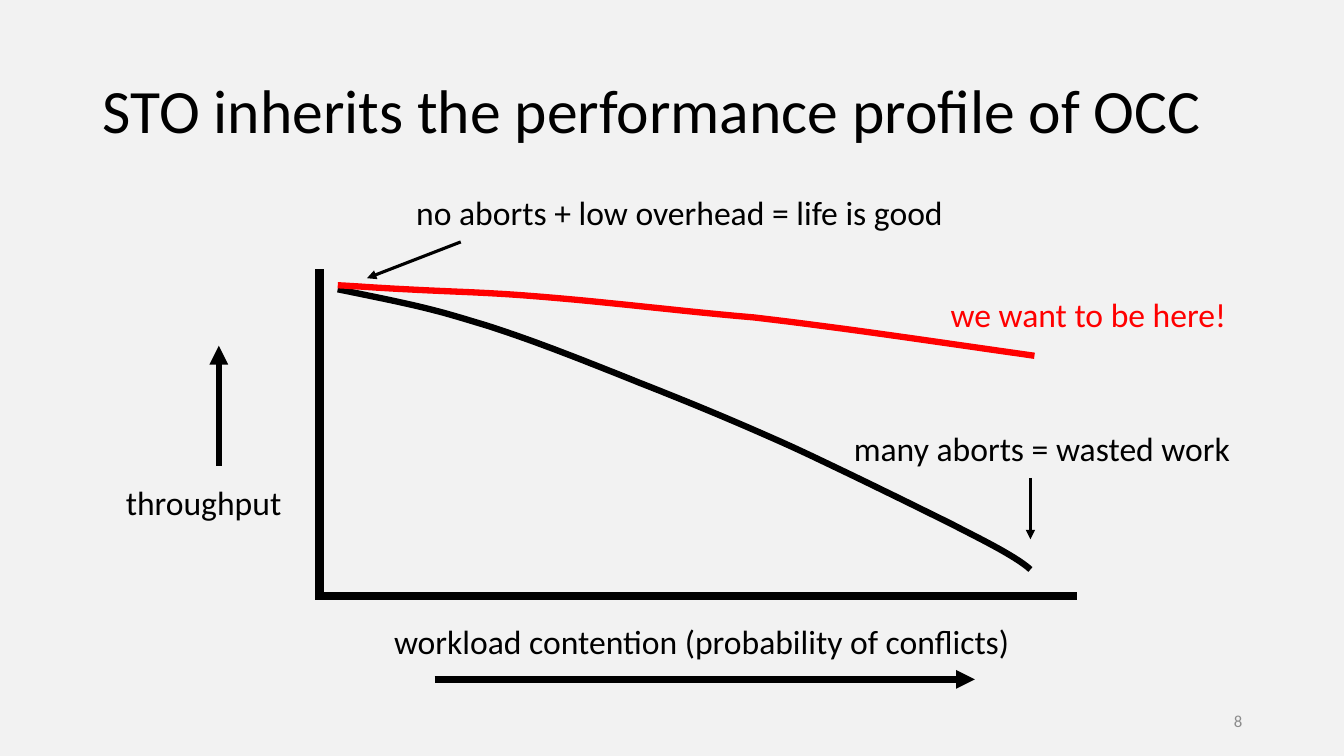
from lxml.etree import SubElement
from pptx import Presentation
from pptx.dml.color import RGBColor
from pptx.enum.shapes import MSO_CONNECTOR
from pptx.enum.text import MSO_ANCHOR, MSO_AUTO_SIZE, PP_ALIGN
from pptx.oxml.ns import qn
from pptx.util import Inches, Pt

COLORS = {"paper": "F2F2F2", "ink": "000000", "goal": "FF0000", "number": "8C8C8C"}
FONT = "Calibri"
TITLE = "STO inherits the performance profile of OCC"
TITLE_BOX = (0.92, 0.4, 11.5, 1.45)
NUMBER = "8"
NUMBER_BOX = (9.42, 6.95, 3, 0.4)
LABEL_HEIGHT = 0.5

LABELS = [
    ("workload contention (probability of conflicts)", 3.81, 6.11, 6.36, "ink"),
    ("throughput", 1.15, 4.73, 1.76, "ink"),
    ("no aborts + low overhead = life is good", 4.03, 1.85, 5.47, "ink"),
    ("many aborts = wasted work", 8.37, 4.2, 3.96, "ink"),
    ("we want to be here!", 9.33, 2.87, 2.96, "goal"),
]
AXES = [((3.17, 2.67), (3.17, 5.95)), ((3.21, 5.91), (10.68, 5.91))]
ARROWS = [
    ((4.31, 6.74), (9.67, 6.74), 4.5),
    ((2.17, 4.62), (2.17, 3.43), 4.5),
    ((4.57, 2.4), (3.64, 2.76), 2.25),
    ((10.22, 4.74), (10.22, 5.35), 2.25),
]
OCC_CURVE = [
    (3.35, 2.87),
    (4.29, 3.06), (4.33, 3.08), (4.83, 3.23),
    (5.33, 3.39), (5.85, 3.6), (6.35, 3.8),
    (6.86, 4), (7.34, 4.2), (7.85, 4.43),
    (8.37, 4.67), (9.22, 5.09), (9.46, 5.21),
    (9.63, 5.3), (10.07, 5.51), (10.22, 5.65),
]
GOAL_CURVE = [
    (3.35, 2.83),
    (3.71, 2.85), (3.73, 2.86), (4.67, 2.9),
    (5.61, 2.94), (6.54, 3.07), (7.48, 3.15),
    (8.42, 3.26), (9.34, 3.4), (10.26, 3.53),
]
CURVE_STEPS = 16


def color(name):
    return RGBColor.from_string(COLORS[name])


def inches(values):
    return [Inches(v) for v in values]


def add_run(p, text, size, name):
    r = p.add_run()
    r.text = text
    r.font.name = FONT
    r.font.size = Pt(size)
    r.font.color.rgb = color(name)


def add_text(slide, text, box, size, name, wrap=False):
    tf = slide.shapes.add_textbox(*inches(box)).text_frame
    tf.word_wrap = wrap
    add_run(tf.paragraphs[0], text, size, name)
    return tf


def add_line(slide, start, end, width, arrow=False):
    line = slide.shapes.add_connector(MSO_CONNECTOR.STRAIGHT, *inches(start + end))
    line.line.color.rgb = color("ink")
    line.line.width = Pt(width)
    if arrow:
        SubElement(line.line._get_or_add_ln(), qn("a:tailEnd"), type="triangle")
    SubElement(line._element.spPr, qn("a:effectLst"))


def bezier_point(controls, t):
    weights = ((1 - t) ** 3, 3 * t * (1 - t) ** 2, 3 * t * t * (1 - t), t ** 3)
    return [sum(w * v for w, v in zip(weights, axis)) for axis in zip(*controls)]


def add_curve(slide, points, name):
    track = [
        inches(bezier_point(points[i:i + 4], step / CURVE_STEPS))
        for i in range(0, len(points) - 1, 3)
        for step in range(1, CURVE_STEPS + 1)
    ]
    builder = slide.shapes.build_freeform(*inches(points[0]))
    builder.add_line_segments(track, close=False)
    sp = builder.convert_to_shape()
    sp.shadow.inherit = False
    sp.fill.background()
    sp.line.color.rgb = color(name)
    sp.line.width = Pt(4.5)


def add_title(slide):
    title = slide.shapes.title
    title.left, title.top, title.width, title.height = inches(TITLE_BOX)
    tf = title.text_frame
    tf.auto_size = MSO_AUTO_SIZE.NONE
    tf.vertical_anchor = MSO_ANCHOR.MIDDLE
    p = tf.paragraphs[0]
    p.alignment = PP_ALIGN.LEFT
    p.line_spacing = 0.9
    add_run(p, TITLE, 44, "ink")


def main():
    prs = Presentation()
    prs.slide_width, prs.slide_height = Inches(13.33), Inches(7.5)
    slide = prs.slides.add_slide(prs.slide_layouts[5])
    slide.background.fill.solid()
    slide.background.fill.fore_color.rgb = color("paper")

    add_title(slide)
    add_curve(slide, OCC_CURVE, "ink")
    for start, end in AXES:
        add_line(slide, start, end, 6)
    for start, end, width in ARROWS:
        add_line(slide, start, end, width, arrow=True)
    for text, left, top, width, name in LABELS:
        tf = add_text(slide, text, (left, top, width, LABEL_HEIGHT), 24, name)
        tf.auto_size = MSO_AUTO_SIZE.SHAPE_TO_FIT_TEXT
    add_curve(slide, GOAL_CURVE, "goal")

    tf = add_text(slide, NUMBER, NUMBER_BOX, 12, "number", wrap=True)
    tf.vertical_anchor = MSO_ANCHOR.MIDDLE
    tf.paragraphs[0].alignment = PP_ALIGN.RIGHT

    prs.save("out.pptx")


if __name__ == "__main__":
    main()
